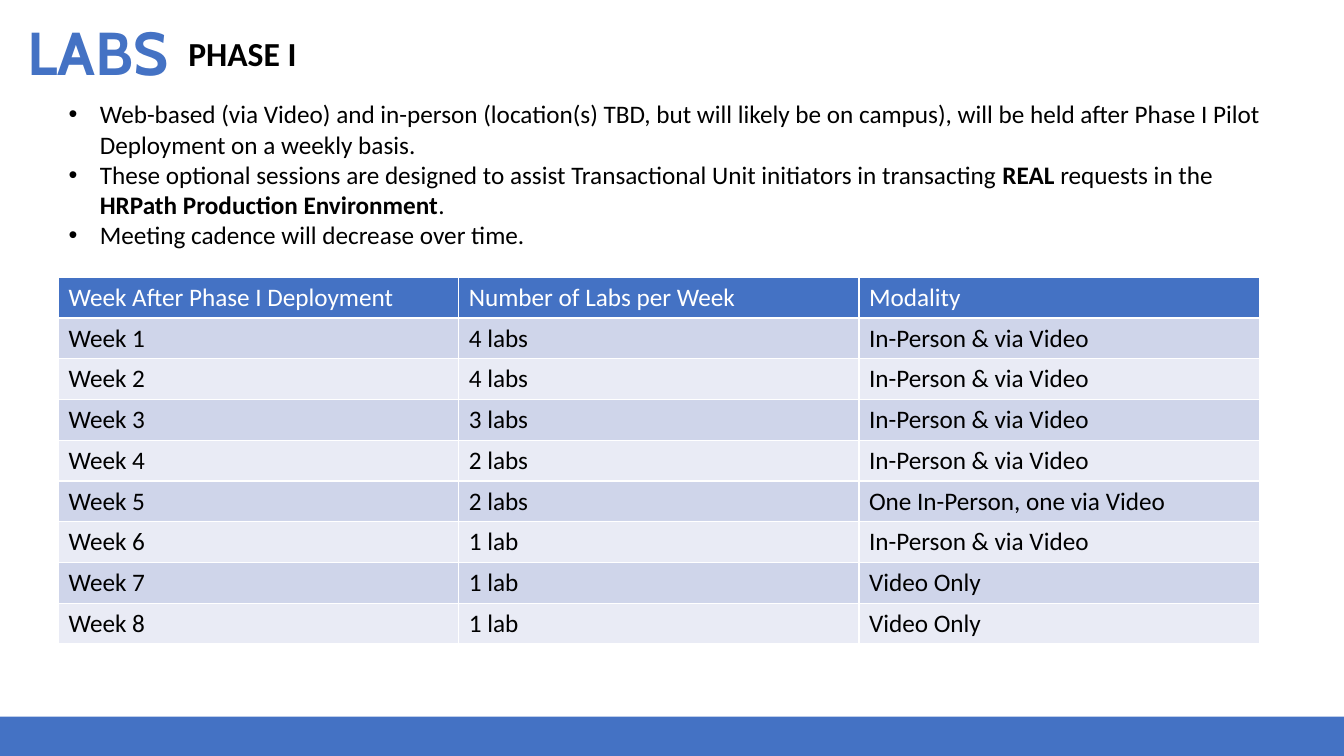
from lxml import etree
from pptx import Presentation
from pptx import util as u
from pptx.dml.color import RGBColor
from pptx.enum import shapes, text
from pptx.oxml.ns import qn

COLORS = {"blue": "4472C4", "odd": "CFD5EA", "even": "E9EBF5",
          "white": "FFFFFF", "black": "000000"}


def add_run(p, words, size, color="black", bold=False, font="Calibri"):
    r = p.add_run()
    r.text = words
    r.font.name, r.font.size, r.font.bold = font, u.Pt(size), bold
    r.font.color.rgb = RGBColor.from_string(COLORS[color])


def add_border(cell, side, width):
    ln = etree.SubElement(cell._tc.get_or_add_tcPr(), qn("a:" + side), w=str(u.Pt(width)))
    fill = etree.SubElement(ln, qn("a:solidFill"))
    etree.SubElement(fill, qn("a:srgbClr"), val=COLORS["white"])


prs = Presentation()
prs.slide_width, prs.slide_height = u.Inches(13.33), u.Inches(7.5)
s = prs.slides.add_slide(prs.slide_layouts[1])

# Footer band
band = s.shapes.add_shape(shapes.MSO_SHAPE.RECTANGLE, u.Inches(0), u.Inches(7.11),
                          u.Inches(13.33), u.Inches(0.39))
band.shadow.inherit = False
band.fill.solid()
band.fill.fore_color.rgb = RGBColor.from_string(COLORS["blue"])
band.line.fill.background()

# Title
title = s.shapes.title
title.left, title.top = u.Inches(0.17), u.Inches(0.18)
title.width, title.height = u.Inches(11.64), u.Inches(0.75)
tf = title.text_frame
tf.auto_size = text.MSO_AUTO_SIZE.NONE
tf.vertical_anchor = text.MSO_ANCHOR.MIDDLE
p = tf.paragraphs[0]
p.alignment = text.PP_ALIGN.LEFT
p.line_spacing = 0.9
add_run(p, "LABS", 43.2, "blue", True, "Cabin")

# Phase label
phase = s.shapes.add_textbox(u.Inches(1.77), u.Inches(0.28), u.Inches(1.84), u.Inches(0.75))
phase.text_frame.word_wrap = True
add_run(phase.text_frame.paragraphs[0], "PHASE I", 24, bold=True)

# Bullets: each item is a list of (words, bold) runs
bullets = [
    [("Web-based (via Video) and in-person (location(s) TBD, but will likely be on campus), "
      "will be held after Phase I Pilot Deployment on a weekly basis.", False)],
    [("These optional sessions are designed to assist Transactional Unit initiators "
      "in transacting ", False), ("REAL", True), (" requests in the ", False),
     ("HRPath Production Environment", True), (".", False)],
    [("Meeting cadence will decrease over time.", False)],
]
body = s.placeholders[1]
body.left, body.top = u.Inches(0.58), u.Inches(0.93)
body.width, body.height = u.Inches(12.26), u.Inches(3.07)
tf = body.text_frame
tf.auto_size = text.MSO_AUTO_SIZE.NONE
tf.vertical_anchor = text.MSO_ANCHOR.TOP
for i, runs in enumerate(bullets):
    p = tf.paragraphs[0] if i == 0 else tf.add_paragraph()
    p.space_before = u.Pt(0)
    p.line_spacing = 1.0
    pPr = p._p.get_or_add_pPr()
    pPr.set("marL", str(u.Inches(0.31)))
    pPr.set("indent", str(-u.Inches(0.31)))
    etree.SubElement(pPr, qn("a:buFont"), typeface="Arial")
    etree.SubElement(pPr, qn("a:buChar"), char="•")
    for words, bold in runs:
        add_run(p, words, 18, bold=bold)

# Lab schedule
both = "In-Person & via Video"
schedule = [
    ("4 labs", both), ("4 labs", both), ("3 labs", both), ("2 labs", both),
    ("2 labs", "One In-Person, one via Video"), ("1 lab", both),
    ("1 lab", "Video Only"), ("1 lab", "Video Only"),
]
rows = [("Week After Phase I Deployment", "Number of Labs per Week", "Modality")]
rows += [(f"Week {n}", labs, modality) for n, (labs, modality) in enumerate(schedule, 1)]
table = s.shapes.add_table(len(rows), 3, u.Inches(0.58), u.Inches(2.75),
                           u.Inches(11.91), u.Inches(3.64)).table
for column in table.columns:
    column.width = u.Inches(3.97)
for i, row in enumerate(rows):
    fill = "blue" if i == 0 else "odd" if i % 2 else "even"
    for j, words in enumerate(row):
        cell = table.cell(i, j)
        for side in ("lnL", "lnR", "lnT", "lnB"):
            add_border(cell, side, 1)
        cell.fill.solid()
        cell.fill.fore_color.rgb = RGBColor.from_string(COLORS[fill])
        add_run(cell.text_frame.paragraphs[0], words, 18, "white" if i == 0 else "black")

prs.save("out.pptx")
